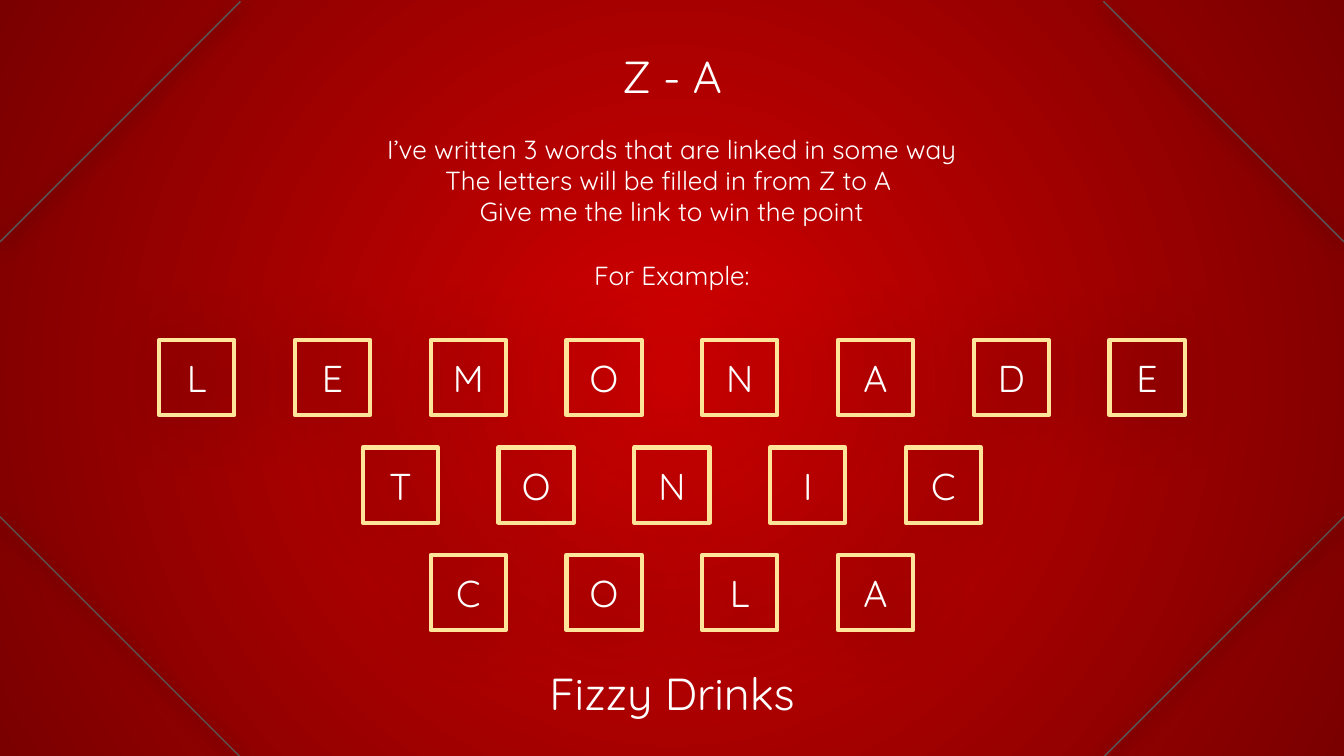
from lxml import etree
from pptx import Presentation
from pptx.dml.color import RGBColor
from pptx.enum.shapes import MSO_CONNECTOR as Connector, MSO_SHAPE as Shape
from pptx.enum.text import MSO_ANCHOR as Anchor, MSO_AUTO_SIZE as AutoSize, PP_ALIGN as Align
from pptx.oxml import parse_xml
from pptx.oxml.ns import nsdecls, qn
from pptx.util import Inches, Pt

WIDTH = 10
HEIGHT = WIDTH * 9 / 16
FONT = "Quicksand"
CENTRE_RED, EDGE_RED = "D20000", "7A0000"
WHITE, CREAM, GREY = "FFFFFF", "FFE599", "585858"

# Rules of the slide, in inches
CORNER = 1.79
TEXT_LEFT, TEXT_WIDTH = 1.71, 6.58
TILE, COLUMN, ROW = 0.56, 1.01, 0.8
FIRST_ROW = 2.53

WORDS = ["LEMONADE", "TONIC", "COLA"]
RULES = [
    "I’ve written 3 words that are linked in some way",
    "The letters will be filled in from Z to A ",
    "Give me the link to win the point",
]


def colour(hex_string):
    return RGBColor.from_string(hex_string)


def inches(*lengths):
    return [Inches(length) for length in lengths]


def add_shadow(shape, opacity, blur, distance):
    """Give a shape a black shadow that falls straight down."""
    shape.element.spPr.append(parse_xml(
        f'<a:effectLst {nsdecls("a")}>'
        f'<a:outerShdw blurRad="{Pt(blur)}" dist="{Pt(distance)}" dir="5400000" '
        f'algn="bl" rotWithShape="0"><a:srgbClr val="000000">'
        f'<a:alpha val="{opacity * 1000}"/></a:srgbClr></a:outerShdw></a:effectLst>'))


def write(shape, lines, size, inset=0.1, anchor=Anchor.TOP, last_gap=0):
    """Write centred lines; last_gap is the space in points above the last one."""
    frame = shape.text_frame
    frame.word_wrap = True
    frame.auto_size = AutoSize.NONE
    frame.vertical_anchor = anchor
    frame.margin_left = frame.margin_right = Inches(inset)
    frame.margin_top = frame.margin_bottom = Inches(inset)
    for number, line in enumerate(lines):
        para = frame.add_paragraph() if number else frame.paragraphs[0]
        para.alignment = Align.CENTER
        para.space_before = Pt(last_gap if number == len(lines) - 1 else 0)
        span = para.add_run()
        span.text = line
        span.font.name = FONT
        span.font.size = Pt(size)
        span.font.color.rgb = colour(WHITE)


def paint_background(page):
    fill = page.background.fill
    fill.gradient()
    for stop, tone in zip(fill.gradient_stops, (CENTRE_RED, EDGE_RED)):
        stop.color.rgb = colour(tone)
    # Turn the linear gradient into a circular one
    gradient = page.element.find(".//" + qn("a:gradFill"))
    gradient.remove(gradient.find(qn("a:lin")))
    circle = etree.SubElement(gradient, qn("a:path"), path="circle")
    etree.SubElement(circle, qn("a:fillToRect"), l="50000", t="50000", r="50000", b="50000")


def add_corners(page, left, top, width, height):
    """Cut each corner of the box with a diagonal line."""
    for side, inward in ((left, CORNER), (left + width, -CORNER)):
        for edge, down in ((top, CORNER), (top + height, -CORNER)):
            line = page.shapes.add_connector(
                Connector.STRAIGHT, *inches(side, edge + down, side + inward, edge))
            line.line.color.rgb = colour(GREY)
            line.line.width = Pt(0.75)
            add_shadow(line, opacity=94, blur=10, distance=2.2)


def add_heading(page, left, top, width):
    title = page.shapes.title
    title.left, title.top, title.width, title.height = inches(left, top, width, 0.62)
    write(title, ["Z - A"], size=24)
    rules = page.shapes.add_textbox(*inches(left, top + 0.63, width, 1.6))
    write(rules, RULES + ["For Example:"], size=14, last_gap=17)


def add_word(page, word, centre, top):
    """Spread the letters of a word in tiles about a centre line."""
    group = page.shapes.add_group_shape()
    left = centre - ((len(word) - 1) * COLUMN + TILE) / 2
    for number, letter in enumerate(word):
        tile = group.shapes.add_shape(
            Shape.RECTANGLE, *inches(left + number * COLUMN, top, TILE, TILE))
        tile.fill.background()
        tile.line.color.rgb = colour(CREAM)
        tile.line.width = Pt(2.25)
        add_shadow(tile, opacity=50, blur=32, distance=1.5)
        write(tile, [letter], size=20, inset=0, anchor=Anchor.MIDDLE)


def add_answer(page, left, top, width):
    answer = page.shapes.add_textbox(*inches(left, top, width, 0.64))
    write(answer, ["Fizzy Drinks"], size=24)


def main():
    deck = Presentation()
    deck.slide_width, deck.slide_height = inches(WIDTH, HEIGHT)
    page = deck.slides.add_slide(deck.slide_layouts.get_by_name("Title Only"))

    paint_background(page)
    add_corners(page, 0, 0.01, WIDTH, HEIGHT)
    add_heading(page, TEXT_LEFT, 0.26, TEXT_WIDTH)
    for number, word in enumerate(WORDS):
        add_word(page, word, WIDTH / 2, FIRST_ROW + number * ROW)
    add_answer(page, TEXT_LEFT, 4.85, TEXT_WIDTH)

    deck.save("out.pptx")


if __name__ == "__main__":
    main()
